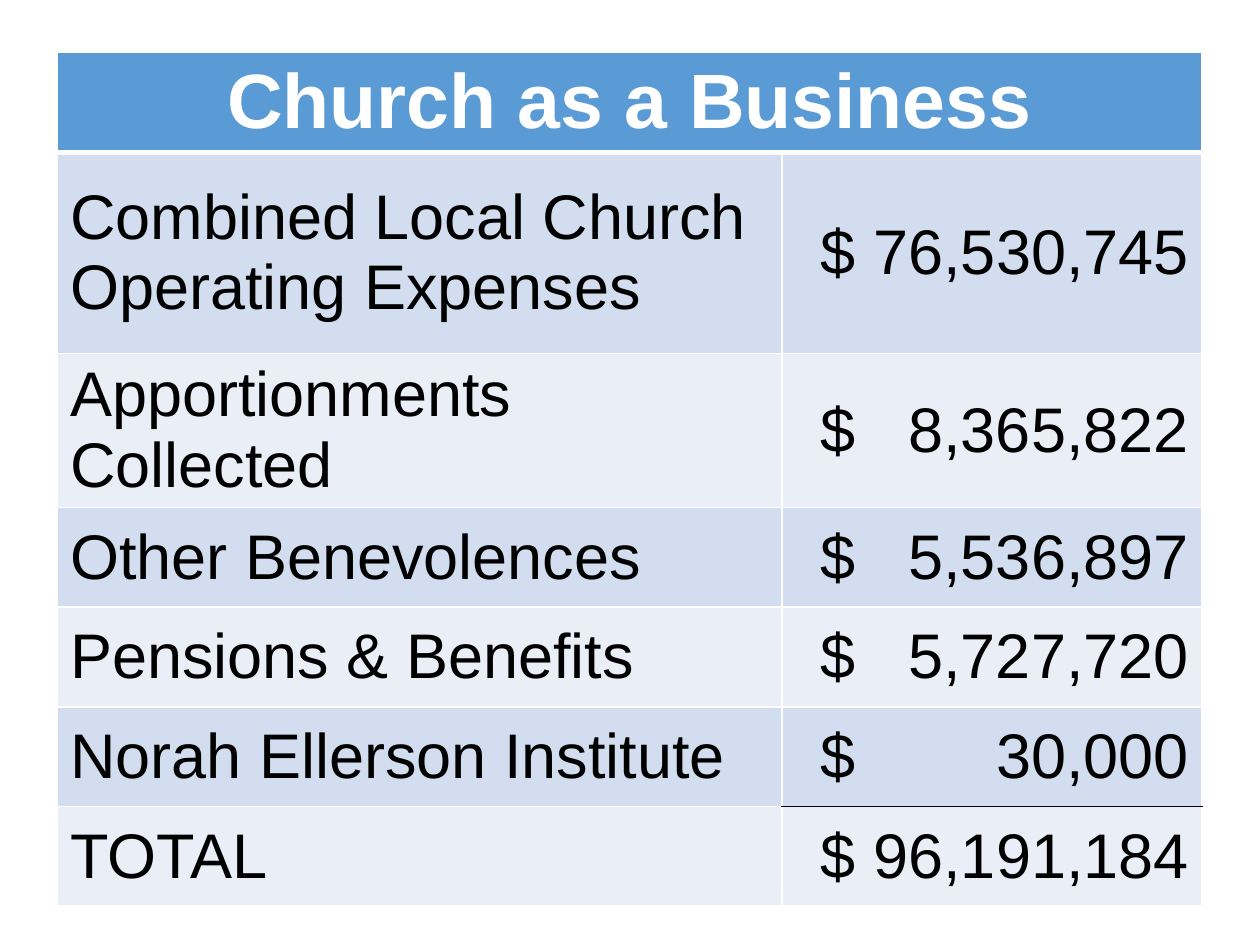
from dataclasses import dataclass

from lxml.etree import SubElement
from pptx import Presentation
from pptx.dml.color import RGBColor
from pptx.enum.text import MSO_ANCHOR, PP_ALIGN
from pptx.oxml.ns import qn
from pptx.util import Pt


@dataclass(frozen=True)
class Theme:
    font: str = "Arial"
    title_size: int = 44
    body_size: int = 36
    header: str = "5B9BD5"
    bands: tuple = ("D2DEEF", "EAEFF7")
    light: str = "FFFFFF"
    dark: str = "000000"


ROWS = [
    ("Combined Local Church Operating Expenses", "76,530,745"),
    ("Apportionments Collected", "8,365,822"),
    ("Other Benevolences", "5,536,897"),
    ("Pensions & Benefits", "5,727,720"),
    ("Norah Ellerson Institute", "30,000"),
    ("TOTAL", "96,191,184"),
]
COLUMN_WIDTHS = (414, 240)
ROW_HEIGHTS = (57, 115, 88, 57, 57, 57, 57)
CELL_MARGIN = 7.2
AMOUNT_MARGIN = 21.6


class SlideBuilder:
    """Draws styled table elements on one slide."""

    def __init__(self, slide, theme):
        self.slide = slide
        self.theme = theme

    def table(self, left, top, widths, heights):
        shape = self.slide.shapes.add_table(
            len(heights), len(widths), Pt(left), Pt(top), Pt(sum(widths)), Pt(sum(heights))
        )
        table = shape.table
        for column, width in zip(table.columns, widths):
            column.width = Pt(width)
        for row, height in zip(table.rows, heights):
            row.height = Pt(height)
        return table

    def borders(self, cell, **special):
        properties = cell._tc.get_or_add_tcPr()
        for position, side in enumerate("LRTB"):
            color, width = special.get(side, (self.theme.light, 1))
            line = properties.makeelement(qn(f"a:ln{side}"), {"w": str(Pt(width))})
            fill = SubElement(line, qn("a:solidFill"))
            SubElement(fill, qn("a:srgbClr"), val=color)
            properties.insert(position, line)

    def cell(self, cell, text, fill, size, color, bold=False, alignment=PP_ALIGN.LEFT, **borders):
        cell.fill.solid()
        cell.fill.fore_color.rgb = RGBColor.from_string(fill)
        cell.vertical_anchor = MSO_ANCHOR.MIDDLE
        cell.margin_top = cell.margin_bottom = Pt(2.5)
        cell.text = text
        paragraph = cell.text_frame.paragraphs[0]
        paragraph.alignment = alignment
        font = paragraph.font
        font.name, font.size, font.bold = self.theme.font, Pt(size), bold
        font.color.rgb = RGBColor.from_string(color)
        self.borders(cell, **borders)

    def title(self, table, text):
        theme = self.theme
        first, last = table.cell(0, 0), table.cell(0, 1)
        first.merge(last)
        self.cell(first, text, theme.header, theme.title_size, theme.light, True,
                  PP_ALIGN.CENTER, B=(theme.light, 3))
        self.borders(last, B=(theme.light, 3))

    def amount(self, cell, amount, fill, **borders):
        self.cell(cell, f"$\t{amount}", fill, self.theme.body_size, self.theme.dark, **borders)
        cell.margin_left = Pt(AMOUNT_MARGIN)
        position = Pt(COLUMN_WIDTHS[1] - AMOUNT_MARGIN - CELL_MARGIN - 0.5)
        properties = cell.text_frame.paragraphs[0]._p.get_or_add_pPr()
        tabs = properties.makeelement(qn("a:tabLst"), {})
        SubElement(tabs, qn("a:tab"), pos=str(position), algn="r")
        properties.insert_element_before(tabs, "a:defRPr", "a:extLst")

    def entries(self, table, rows):
        theme = self.theme
        rule = (theme.dark, 1)
        for index, (label, amount) in enumerate(rows, 1):
            fill = theme.bands[(index - 1) % 2]
            borders = {len(rows) - 1: {"B": rule}, len(rows): {"T": rule}}.get(index, {})
            if index == 1:
                borders = {"T": (theme.light, 3)}
            label_borders = borders if index == 1 else {}
            self.cell(table.cell(index, 0), label, fill, theme.body_size, theme.dark, **label_borders)
            self.amount(table.cell(index, 1), amount, fill, **borders)


def main():
    presentation = Presentation()
    presentation.slide_width, presentation.slide_height = Pt(720), Pt(540)
    slide = presentation.slides.add_slide(presentation.slide_layouts[6])
    builder = SlideBuilder(slide, Theme())
    table = builder.table(33, 30, COLUMN_WIDTHS, ROW_HEIGHTS)
    builder.title(table, "Church as a Business")
    builder.entries(table, ROWS)
    presentation.save("out.pptx")


if __name__ == "__main__":
    main()
